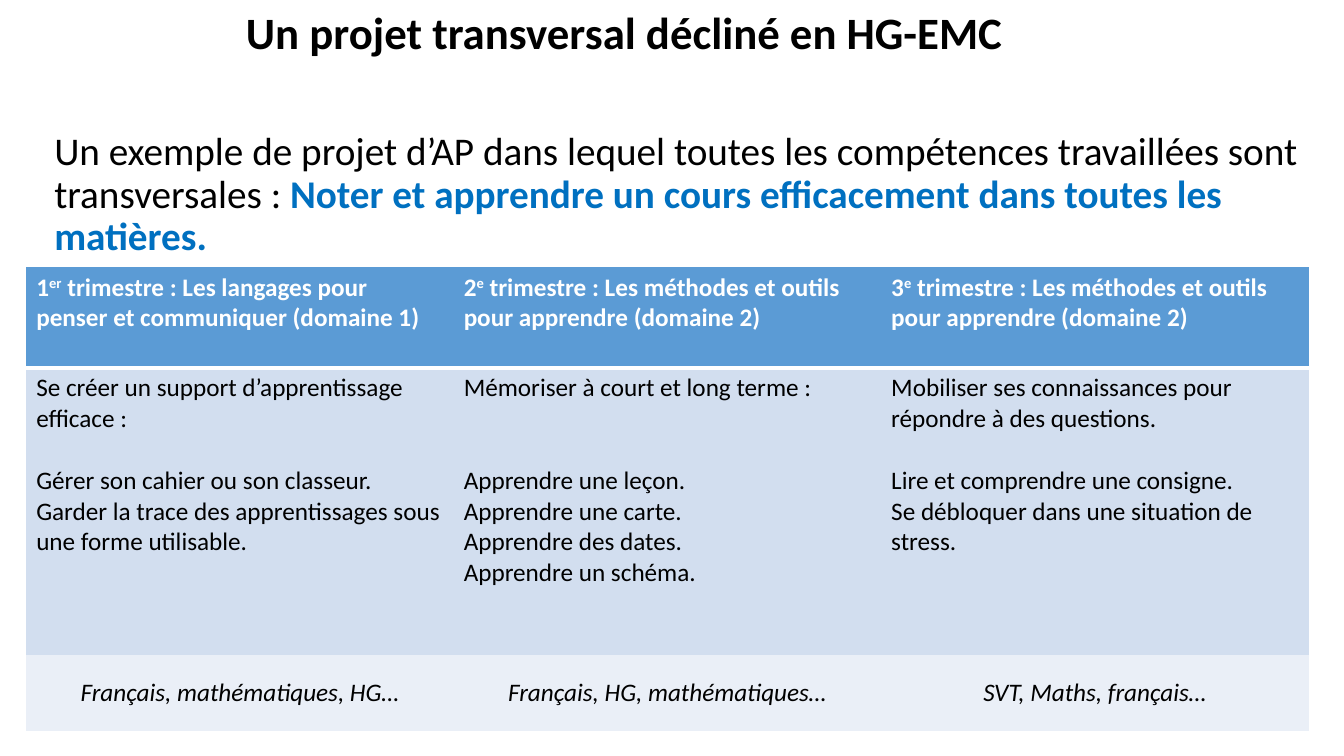
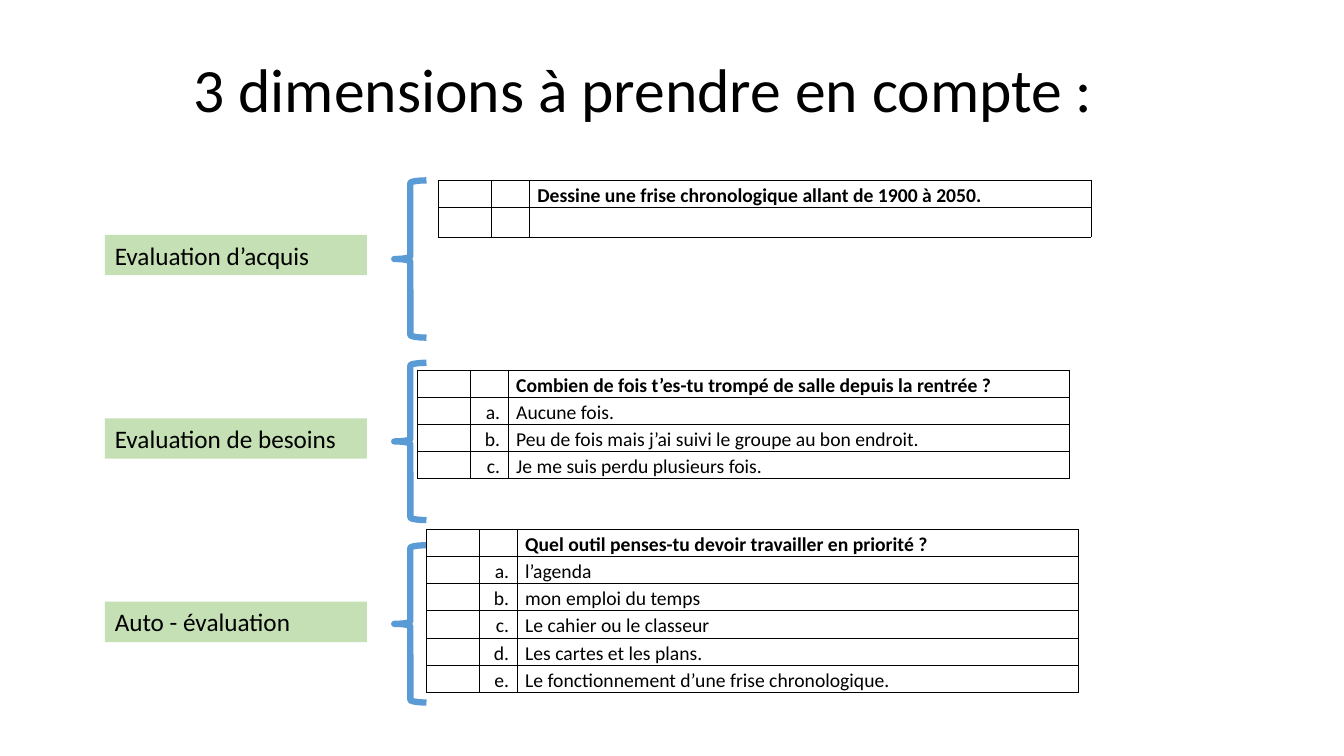
from lxml import etree
from pptx import Presentation
from pptx.dml.color import RGBColor
from pptx.enum.shapes import MSO_SHAPE
from pptx.enum.text import MSO_ANCHOR, PP_ALIGN
from pptx.oxml.ns import qn
from pptx.util import Inches, Pt

RECT = MSO_SHAPE.RECTANGLE
BRACE = MSO_SHAPE.LEFT_BRACE
TOP, MID, LOW = MSO_ANCHOR.TOP, MSO_ANCHOR.MIDDLE, MSO_ANCHOR.BOTTOM
LEFT, MIDST, RIGHT = PP_ALIGN.LEFT, PP_ALIGN.CENTER, PP_ALIGN.RIGHT

FONT = "Calibri"
BLACK, WHITE = "000000", "FFFFFF"
BLUE, STRONG, GREEN = "5B9BD5", "0070C0", "C5E0B4"
PALE, FAINT = "D2DEEF", "EAEFF7"
EDGES = ("L", "R", "T", "B")

HEADS = [
    ("1", "er", " trimestre : Les langages pour penser et communiquer (domaine 1)"),
    ("2", "e", " trimestre : Les méthodes et outils pour apprendre (domaine 2)"),
    ("3", "e", " trimestre : Les méthodes et outils pour apprendre (domaine 2)"),
]
GOALS = [
    ("Se créer un support d’apprentissage efficace :", 22,
     ["Gérer son cahier ou son classeur.",
      "Garder la trace des apprentissages sous une forme utilisable."]),
    ("Mémoriser à court et long terme :", 44,
     ["Apprendre une leçon.", "Apprendre une carte.",
      "Apprendre des dates.", "Apprendre un schéma."]),
    ("Mobiliser ses connaissances pour répondre à des questions.", 22,
     ["Lire et comprendre une consigne.",
      "Se débloquer dans une situation de stress."]),
]
FIELDS = ["Français, mathématiques, HG…", "Français, HG, mathématiques…",
          "SVT, Maths, français…"]

LABELS = ["Evaluation d’acquis", "Evaluation de besoins", "Auto - évaluation"]
QUIZ = [
    (4.35, 1.79, "Dessine une frise chronologique allant de 1900 à 2050.", [("", "")]),
    (4.14, 3.67, "Combien de fois t’es-tu trompé de salle depuis la rentrée ?",
     [("a.", "Aucune fois."),
      ("b.", "Peu de fois mais j’ai suivi le groupe au bon endroit."),
      ("c.", "Je me suis perdu plusieurs fois.")]),
    (4.23, 5.25, "Quel outil penses-tu devoir travailler en priorité ?",
     [("a.", "l’agenda"), ("b.", "mon emploi du temps"),
      ("c.", "Le cahier ou le classeur"), ("d.", "Les cartes et les plans."),
      ("e.", "Le fonctionnement d’une frise chronologique.")]),
]


def color(code):
    return RGBColor.from_string(code)


def paint(item, code):
    item.fill.solid()
    item.fill.fore_color.rgb = color(code)


def box(x, y, w, h):
    return [Inches(n) for n in (x, y, w, h)]


def write(para, text, size, tint=BLACK, bold=False, slant=False, base=0):
    run = para.add_run()
    run.text = text
    font = run.font
    font.name, font.size = FONT, Pt(size)
    font.bold, font.italic = bold, slant
    font.color.rgb = color(tint)
    if base:
        run._r.get_or_add_rPr().set("baseline", str(base * 1000))


def block(slide, place, anchor=TOP):
    frame = slide.shapes.add_textbox(*box(*place)).text_frame
    frame.word_wrap = True
    frame.vertical_anchor = anchor
    para = frame.paragraphs[0]
    para.line_spacing = 0.9
    return para


def title(slide, text, place, size, bold=False):
    write(block(slide, place, MID), text, size, bold=bold)


def label(slide, text, y):
    shape = slide.shapes.add_shape(RECT, *box(1.04, y, 2.6, 0.4))
    shape.shadow.inherit = False
    paint(shape, GREEN)
    shape.line.fill.background()
    para = shape.text_frame.paragraphs[0]
    para.alignment = LEFT
    write(para, text, 18)


def brace(slide, y):
    shape = slide.shapes.add_shape(BRACE, *box(3.91, y, 0.32, 1.56))
    shape.shadow.inherit = False
    shape.fill.background()
    shape.line.color.rgb = color(BLUE)
    shape.line.width = Pt(4.5)


def border(cell, lines):
    props = cell._tc.get_or_add_tcPr()
    for spot, edge in enumerate(EDGES):
        line = etree.Element(qn("a:ln" + edge))
        if edge in lines:
            code, width = lines[edge]
            line.set("w", str(Pt(width)))
            fill = etree.SubElement(line, qn("a:solidFill"))
            etree.SubElement(fill, qn("a:srgbClr"), val=code)
        else:
            etree.SubElement(line, qn("a:noFill"))
        props.insert(spot, line)


def grid(slide, x, y, cols, rows):
    place = box(x, y, sum(cols), sum(rows))
    table = slide.shapes.add_table(len(rows), len(cols), *place).table
    table.first_row = table.horz_banding = False
    for col, width in zip(table.columns, cols):
        col.width = Inches(width)
    for row, height in zip(table.rows, rows):
        row.height = Inches(height)
    return table


def terms(slide):
    table = grid(slide, 0.26, 2.65, [4.24] * 3, [1, 2.85, 0.75])
    rule = (WHITE, 3)
    looks = [(BLUE, {"B": rule}), (PALE, {"T": rule}), (FAINT, {})]
    for r, (fill, lines) in enumerate(looks):
        for c in range(3):
            paint(table.cell(r, c), fill)
            border(table.cell(r, c), lines)
    for c, (head, goal, field) in enumerate(zip(HEADS, GOALS, FIELDS)):
        para = table.cell(0, c).text_frame.paragraphs[0]
        for text, base in zip(head, (0, 30, 0)):
            write(para, text, 18, WHITE, True, base=base)
        lead, gap, tasks = goal
        frame = table.cell(1, c).text_frame
        write(frame.paragraphs[0], lead, 18)
        for n, task in enumerate(tasks):
            para = frame.add_paragraph()
            para.space_before = Pt(0 if n else gap)
            write(para, task, 18)
        last = table.cell(2, c)
        last.vertical_anchor = MID
        para = last.text_frame.paragraphs[0]
        para.alignment = MIDST
        write(para, field, 18, slant=True)


def quiz(slide, x, y, ask, picks):
    rows = [("", "", ask)] + [("", *pick) for pick in picks]
    high = [0.27] * len(rows)
    if len(rows) == 2:
        high[1] = 0.29
    table = grid(slide, x, y, [0.52, 0.38, 5.57], high)
    for r, row in enumerate(rows):
        for c, text in enumerate(row):
            cell = table.cell(r, c)
            cell.fill.background()
            border(cell, dict.fromkeys(EDGES, (BLACK, 0.5)))
            cell.margin_left = cell.margin_right = Inches(0.08)
            cell.margin_top = cell.margin_bottom = 0
            cell.vertical_anchor = LOW if r else TOP
            para = cell.text_frame.paragraphs[0]
            para.alignment = RIGHT if c == 1 else LEFT
            if text:
                para.line_spacing = 1.15
                write(para, text, 14, bold=r == 0)
            else:
                para._p.get_or_add_endParaRPr().set("sz", "1000")


def project(slide):
    title(slide, "Un projet transversal décliné en HG-EMC", (2.34, 0, 9.75, 0.7), 32, True)
    para = block(slide, (0.44, 1.26, 12.53, 1.4))
    write(para, "Un exemple de projet d’AP dans lequel toutes les compétences "
                "travaillées sont transversales : ", 28)
    write(para, "Noter et apprendre un cours efficacement dans toutes les matières.",
          28, STRONG, True)
    terms(slide)


def survey(slide):
    title(slide, "3 dimensions à prendre en compte :", (1.82, 0.22, 9.75, 1.4), 44)
    for n, text in enumerate(LABELS):
        brace(slide, 1.79 + 1.81 * n)
        label(slide, text, 2.33 + 1.82 * n)
    for item in QUIZ:
        quiz(slide, *item)


def main():
    deck = Presentation()
    deck.slide_width, deck.slide_height = Inches(13.33), Inches(7.5)
    for build in (project, survey):
        build(deck.slides.add_slide(deck.slide_layouts[6]))
    deck.save("out.pptx")


if __name__ == "__main__":
    main()
